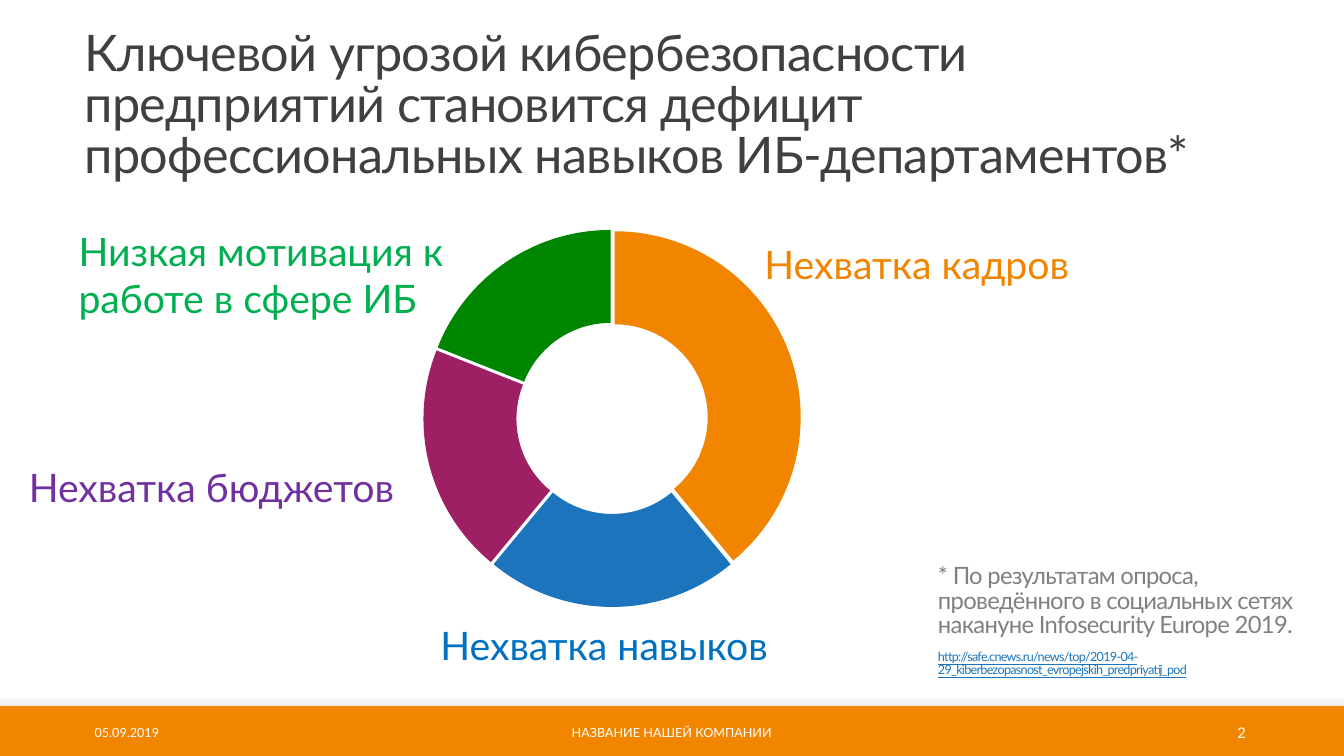
from lxml import etree
from pptx import Presentation
from pptx.chart.data import CategoryChartData
from pptx.dml.color import RGBColor
from pptx.enum.chart import XL_CHART_TYPE as ChartType
from pptx.enum.shapes import MSO_SHAPE as Shape
from pptx.enum.text import MSO_ANCHOR as Anchor, MSO_AUTO_SIZE as AutoSize, PP_ALIGN as Align
from pptx.oxml.ns import qn
from pptx.util import Pt

COLORS = {
    "orange": "F18500", "blue": "1C75BC", "plum": "9E1F63", "green": "008500",
    "sky": "0070C0", "violet": "7030A0", "emerald": "00B050",
    "dark": "404040", "grey": "808080", "pale": "F2F2F2",
    "white": "FFFFFF", "black": "000000",
}
FONT = "Lato"
SHARES = [(39, "orange"), (22, "blue"), (20, "plum"), (19, "green")]
REASONS = [
    ("Нехватка кадров", 539, 168, 261, 41, "orange"),
    ("Нехватка навыков", 307.5, 440, 261, 41, "sky"),
    ("Нехватка бюджетов", 13.5, 327.5, 300, 41, "violet"),
    ("Низкая мотивация к работе в сфере ИБ", 49, 159, 300, 75, "emerald"),
]
FOOTER = [
    ("05.09.2019", 60.5, 194.5, 9, Align.LEFT),
    ("НАЗВАНИЕ НАШЕЙ КОМПАНИИ", 290, 379.5, 9, Align.CENTER),
    ("2", 794, 103, 10.5, Align.RIGHT),
]


def color(name):
    """Return the named palette colour."""
    return RGBColor.from_string(COLORS[name])


def place(box, left, top, width, height):
    """Set the position and size of a shape."""
    box.left, box.top, box.width, box.height = map(Pt, (left, top, width, height))


def write(box, text, size, ink, align=Align.LEFT, anchor=Anchor.TOP):
    """Fill a box with one formatted paragraph and return its run."""
    frame = box.text_frame
    frame.text = text
    frame.word_wrap = True
    frame.auto_size = AutoSize.NONE
    frame.vertical_anchor = anchor
    para = frame.paragraphs[0]
    para.alignment = align
    span = para.runs[0]
    span.font.name = FONT
    span.font.size = Pt(size)
    span.font.color.rgb = color(ink)
    return span


def write_tight(box, text, size, ink):
    """Write text without insets, with close lines and letters."""
    span = write(box, text, size, ink)
    frame = box.text_frame
    frame.margin_left = frame.margin_right = frame.margin_top = frame.margin_bottom = 0
    frame.paragraphs[0].line_spacing = 0.85
    span.font._element.set("spc", "-50")
    return span


def add_box(page, *bounds):
    """Add a text box at the given bounds."""
    return page.shapes.add_textbox(*map(Pt, bounds))


def add_band(page, top, height, fill):
    """Add a full-width coloured band."""
    band = page.shapes.add_shape(Shape.RECTANGLE, 0, Pt(top), Pt(960), Pt(height))
    band.shadow.inherit = False
    band.fill.solid()
    band.fill.fore_color.rgb = color(fill)
    band.line.fill.background()


def add_doughnut(page, *bounds):
    """Add the doughnut chart of threat shares."""
    data = CategoryChartData()
    data.categories = [str(number) for number in range(1, len(SHARES) + 1)]
    data.add_series("Series 1", [share for share, _ in SHARES])
    chart = page.shapes.add_chart(ChartType.DOUGHNUT, *map(Pt, bounds), data).chart
    chart.has_legend = False
    chart.has_title = False
    chart.font.name = "Calibri"
    chart.font.size = Pt(10)
    chart.font.color.rgb = color("black")
    plot = chart.plots[0]
    plot.vary_by_categories = True
    plot._element.find(qn("c:holeSize")).set("val", "62")
    series = plot.series[0]
    explosion = etree.Element(qn("c:explosion"), val="3")
    series._element.find(qn("c:tx")).addnext(explosion)
    for index, (_, fill) in enumerate(SHARES):
        sector = series.points[index].format.fill
        sector.solid()
        sector.fore_color.rgb = color(fill)


def main():
    """Build the slide and save the deck."""
    deck = Presentation()
    deck.slide_width, deck.slide_height = Pt(960), Pt(540)
    page = deck.slides.add_slide(deck.slide_layouts[5])

    add_band(page, 504, 36, "orange")
    add_band(page, 499, 5, "pale")
    for text, left, width, size, align in FOOTER:
        box = add_box(page, left, 508.5, width, 29)
        write(box, text, size, "white", align, Anchor.MIDDLE)

    title = page.shapes.title
    place(title, 60.5, 21.5, 837.5, 66)
    write_tight(title, "Ключевой угрозой кибербезопасности предприятий становится дефицит "
                "профессиональных навыков ИБ-департаментов*", 36, "dark")

    add_doughnut(page, 278.5, 154, 317.5, 289.5)
    write_tight(add_box(page, 670, 404, 272, 66),
                "* По результатам опроса, проведённого в социальных сетях "
                "накануне Infosecurity Europe 2019.", 17, "grey")
    link = write_tight(add_box(page, 670, 465, 317.5, 34),
                       "http://safe.cnews.ru/news/top/2019-04-"
                       "29_kiberbezopasnost_evropejskih_predpriyatij_pod", 9, "blue")
    link.font.underline = True

    for text, left, top, width, height, ink in REASONS:
        write(add_box(page, left, top, width, height), text, 28, ink)

    deck.save("out.pptx")


if __name__ == "__main__":
    main()
